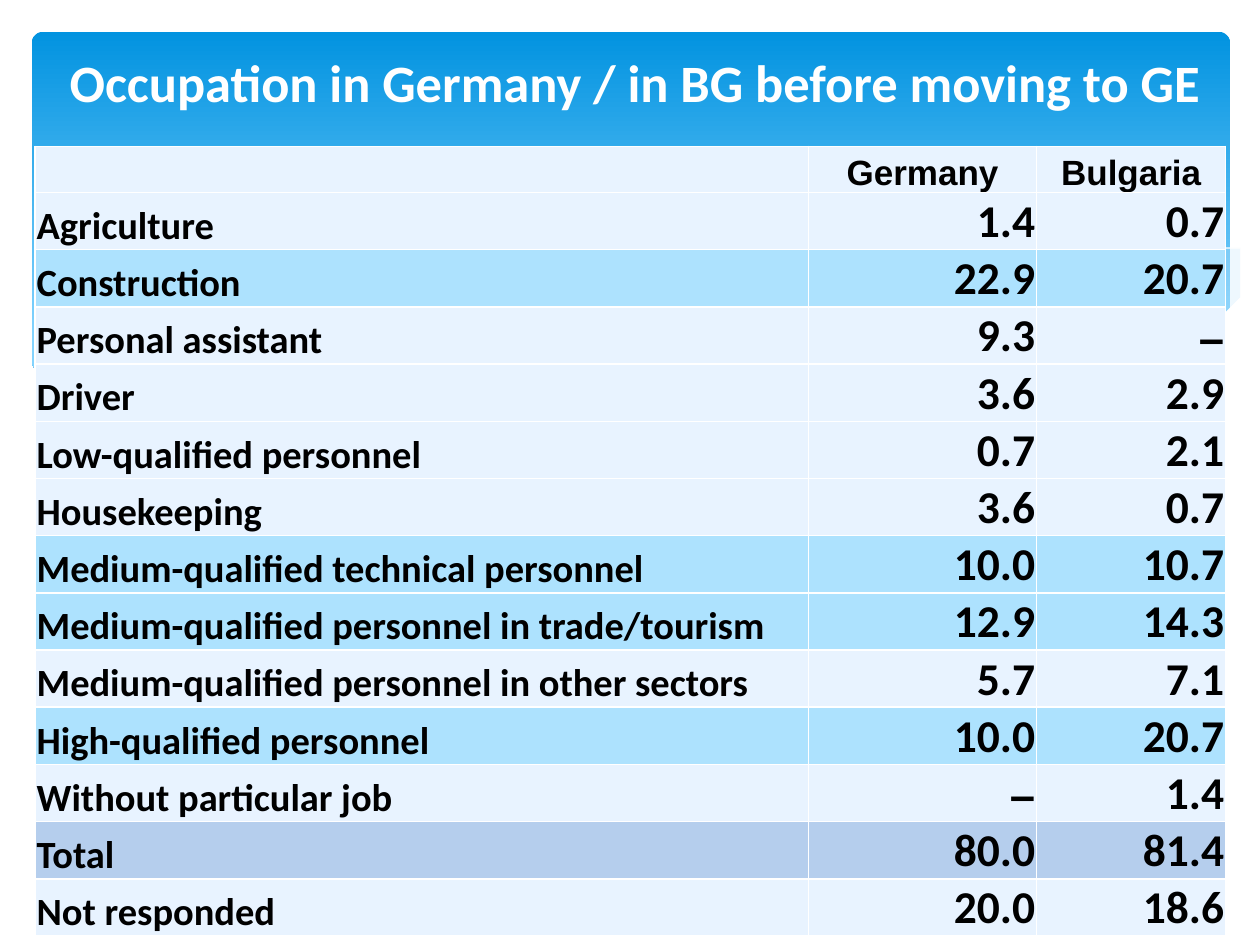
"""Build a slide with a table of occupations in Germany and Bulgaria."""
from pptx import Presentation
from pptx import util as u
from pptx.dml.color import RGBColor
from pptx.enum import shapes, text
from pptx.oxml import parse_xml
from pptx.oxml.ns import nsdecls, qn

WHITE = RGBColor(0xFF, 0xFF, 0xFF)
BLACK = RGBColor(0, 0, 0)
DEEP = RGBColor(0x02, 0x93, 0xE0)
LIGHT = RGBColor(0x83, 0xD3, 0xFE)
MIST = RGBColor(0xC6, 0xE7, 0xFC)
PALE = RGBColor(0xE8, 0xF3, 0xFF)
SKY = RGBColor(0xAD, 0xE2, 0xFE)
STEEL = RGBColor(0xB5, 0xCE, 0xED)

TITLE = "Occupation in Germany / in BG before moving to GE"
HEADS = ("", "Germany", "Bulgaria")
ROWS = (
    ("Agriculture", "1.4", "0.7", PALE),
    ("Construction", "22.9", "20.7", SKY),
    ("Personal assistant", "9.3", "–", PALE),
    ("Driver", "3.6", "2.9", PALE),
    ("Low-qualified personnel", "0.7", "2.1", PALE),
    ("Housekeeping", "3.6", "0.7", PALE),
    ("Medium-qualified technical personnel", "10.0", "10.7", SKY),
    ("Medium-qualified personnel in trade/tourism", "12.9", "14.3", SKY),
    ("Medium-qualified personnel in other sectors", "5.7", "7.1", PALE),
    ("High-qualified personnel", "10.0", "20.7", SKY),
    ("Without particular job", "–", "1.4", PALE),
    ("Total", "80.0", "81.4", STEEL),
    ("Not responded", "20.0", "18.6", PALE),
)

RIGHT = ((24.79, 5.08), (23.01, 5.41), (21.13, 5.84), (19.13, 6.3), (16.79, 6.73),
         (18.26, 6.91), (19.84, 7.04), (21.21, 7.04), (22.58, 6.91), (23.75, 6.65),
         (24.79, 6.27))
MIDDLE = ((22.68, 6.93), (20.5, 6.6), (17.93, 6.1), (15.98, 5.64), (14.1, 5.21),
          (12.42, 4.93), (10.67, 4.75), (9.17, 4.7), (7.26, 4.85), (9.19, 5.16),
          (11.4, 5.64), (14.38, 6.3), (16.89, 6.76), (19, 7.01), (21.03, 7.06))
FALL = ((7.85, 4.95), (8.97, 4.8), (10.57, 4.75), (12.95, 4.88), (15.44, 5.18),
        (17.65, 5.56), (20.19, 6.12), (23.04, 6.91))
RISE = ((15.57, 6.53), (17.65, 5.97), (19.71, 5.49), (22, 5.05), (23.47, 4.83),
        (24.77, 4.7))
FRONT = ((24.82, 6.25), (23.62, 6.65), (22.23, 6.93), (20.55, 7.04), (18.44, 6.91),
         (15.9, 6.55), (13.44, 6.07), (11.35, 5.59), (9.27, 5.13), (7.42, 4.83),
         (5.84, 4.7), (4.5, 4.67), (3.02, 4.75), (1.7, 5), (0.91, 5.26),
         (0.58, 5.41), (0.58, 8.36), (24.82, 8.36))


def add_run(para, words, size, color, font="Calibri"):
    """Add one bold run to a paragraph."""
    run = para.add_run()
    run.text = words
    run.font.name, run.font.size, run.font.bold = font, u.Pt(size), True
    run.font.color.rgb = color


def add_panel(slide):
    """Add the rounded panel with its gradient."""
    panel = slide.shapes.add_shape(shapes.MSO_SHAPE.ROUNDED_RECTANGLE,
                                   u.Cm(0.64), u.Cm(0.64), u.Cm(24.16), u.Cm(6.86))
    panel.adjustments[0] = 0.034
    panel.shadow.inherit = False
    panel.line.fill.background()
    panel.fill.gradient()
    panel.fill.gradient_angle = 270
    for stop, place, color in zip(panel.fill.gradient_stops, (0, 0.9), (DEEP, LIGHT)):
        stop.position, stop.color.rgb = place, color


def add_path(slide, points, closed):
    """Draw a path through points given in centimetres."""
    pen = slide.shapes.build_freeform(*points[0], scale=u.Cm(1))
    pen.add_line_segments(points[1:], close=closed)
    path = pen.convert_to_shape()
    path.shadow.inherit = False
    return path


def add_wave(slide, points, color, alpha=100):
    """Add a filled wave, with its opacity in percent."""
    wave = add_path(slide, points, True)
    wave.line.fill.background()
    wave.fill.solid()
    wave.fill.fore_color.rgb = color
    if alpha < 100:
        tint = wave.fill._xPr.find(".//" + qn("a:srgbClr"))
        tint.append(parse_xml(f'<a:alpha {nsdecls("a")} val="{alpha * 1000}"/>'))


def add_curve(slide, points):
    """Add an open white hairline."""
    curve = add_path(slide, points, False)
    curve.fill.background()
    curve.line.color.rgb = WHITE
    curve.line.width = u.Pt(0)


def set_title(slide):
    """Place the title and bring it in front of the panel."""
    title = slide.shapes.title
    title.left, title.top = u.Cm(0.89), u.Cm(0.53)
    title.width, title.height = u.Cm(23.83), u.Cm(2.21)
    frame = title.text_frame
    frame.vertical_anchor = text.MSO_ANCHOR.MIDDLE
    para = frame.paragraphs[0]
    para.alignment = text.PP_ALIGN.CENTER
    add_run(para, TITLE, 30, WHITE)
    slide.shapes._spTree.append(title._element)


def set_cell(cell, words, fill, align, size, font):
    """Fill, border and write one table cell."""
    props = cell._tc.get_or_add_tcPr()
    for side in "LRTB":
        props.append(parse_xml(
            f'<a:ln{side} {nsdecls("a")} w="12700"><a:solidFill>'
            f'<a:srgbClr val="{WHITE}"/></a:solidFill></a:ln{side}>'))
    cell.fill.solid()
    cell.fill.fore_color.rgb = fill
    cell.margin_left = cell.margin_right = cell.margin_top = u.Cm(0.03)
    cell.margin_bottom = 0
    cell.vertical_anchor = text.MSO_ANCHOR.BOTTOM
    para = cell.text_frame.paragraphs[0]
    para.alignment = align
    if words:
        add_run(para, words, size, BLACK, font)


def add_grid(slide):
    """Add the table of occupations."""
    side = text.PP_ALIGN
    grid = slide.shapes.add_table(len(ROWS) + 1, len(HEADS), u.Cm(0.71), u.Cm(2.95),
                                  u.Cm(24), u.Cm(13.93)).table
    grid.first_row = grid.horz_banding = False
    for col, width in zip(grid.columns, (15.59, 4.6, 3.81)):
        col.width = u.Cm(width)
    for num, row in enumerate(grid.rows):
        row.height = u.Cm(1 if num else 0.93)
    for col, head in enumerate(HEADS):
        set_cell(grid.cell(0, col), head, PALE, side.CENTER, 20, "Arial")
    for num, (job, *shares, fill) in enumerate(ROWS, 1):
        set_cell(grid.cell(num, 0), job, fill, side.LEFT, 22, "Calibri")
        for col, share in enumerate(shares, 1):
            font = "Arial" if share == "–" else "Calibri"
            set_cell(grid.cell(num, col), share, fill, side.RIGHT, 26, font)


def main():
    """Build and save the slide."""
    deck = Presentation()
    deck.slide_width, deck.slide_height = u.Cm(25.4), u.Cm(19.05)
    slide = deck.slides.add_slide(deck.slide_layouts[5])
    add_panel(slide)
    add_wave(slide, RIGHT, MIST, 29)
    add_wave(slide, MIDDLE, MIST, 40)
    add_curve(slide, FALL)
    add_curve(slide, RISE)
    add_wave(slide, FRONT, WHITE)
    set_title(slide)
    add_grid(slide)
    deck.save("out.pptx")


if __name__ == "__main__":
    main()
